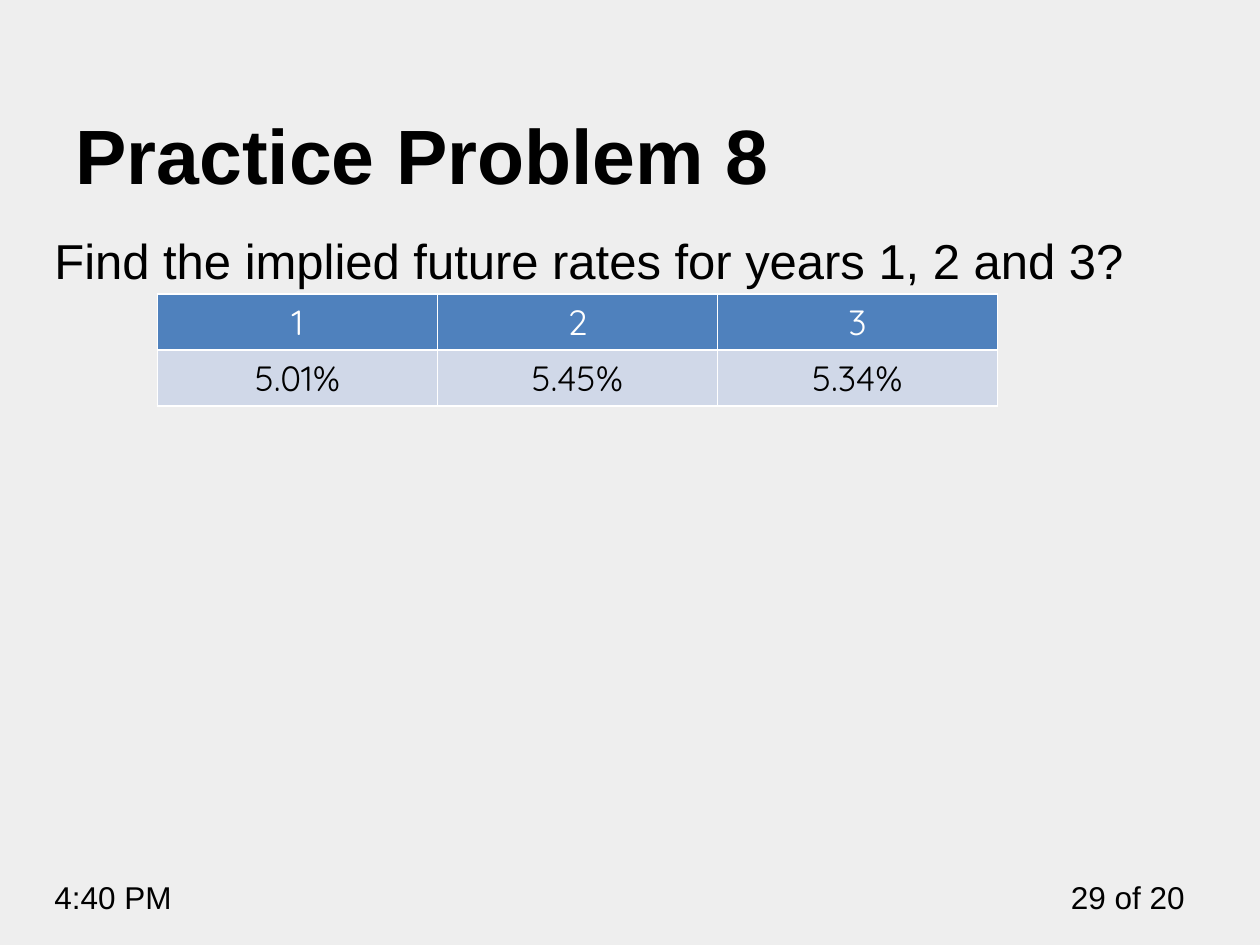
from lxml.etree import SubElement
from pptx import Presentation
from pptx.dml.color import RGBColor as Color
from pptx.enum.text import MSO_ANCHOR as Anchor, PP_ALIGN as Align
from pptx.oxml.ns import qn
from pptx.util import Pt

COLORS = {"back": "EEEEEE", "ink": "000000", "white": "FFFFFF",
          "header": "4F81BD", "body": "D0D8E8"}

# text, (left, top, width, height), top inset, anchor, alignment, font
TEXTS = [
    ("29 of 20", (600, 498, 84, 29), 3.6, Anchor.TOP, Align.RIGHT, {"size": Pt(18)}),
    ("4:40 PM", (24, 498, 114, 29), 3.6, Anchor.TOP, Align.LEFT, {"size": Pt(18)}),
    ("Find the implied future rates for years 1, 2 and 3?",
     (24, 126, 666, 366), 6, Anchor.TOP, Align.LEFT, {"size": Pt(28)}),
    ("Practice Problem 8", (36, 28, 648, 90), 3.6, Anchor.BOTTOM, Align.LEFT,
     {"size": Pt(44), "bold": True}),
]
RATES = [("1", "2", "3"), ("5.01%", "5.45%", "5.34%")]
ROW_STYLES = [("header", "white"), ("body", "ink")]
TABLE_LEFT, TABLE_TOP, COLUMN_WIDTH, ROW_HEIGHT = 90, 168, 160, 32


def rgb(name):
    return Color.from_string(COLORS[name])


def write(frame, text, align, color, font):
    para = frame.paragraphs[0]
    para.alignment = align
    span = para.add_run()
    span.text = text
    for name, value in font.items():
        setattr(span.font, name, value)
    span.font.color.rgb = rgb(color)


def add_text(page, text, place, inset, anchor, align, font):
    frame = page.shapes.add_textbox(*map(Pt, place)).text_frame
    frame.word_wrap = True
    frame.margin_top = Pt(inset)
    frame.vertical_anchor = anchor
    write(frame, text, align, "ink", {"name": "Arial", **font})


def add_borders(cell):
    """Draw white one-point lines; they must come before the cell's fill."""
    props = cell._tc.get_or_add_tcPr()
    for side in ("lnL", "lnR", "lnT", "lnB"):
        line = SubElement(props, qn(f"a:{side}"), w=str(Pt(1)))
        fill = SubElement(line, qn("a:solidFill"))
        SubElement(fill, qn("a:srgbClr"), val=COLORS["white"])


def add_rates(page):
    rows, columns = len(RATES), len(RATES[0])
    table = page.shapes.add_table(
        rows, columns, Pt(TABLE_LEFT), Pt(TABLE_TOP),
        Pt(columns * COLUMN_WIDTH), Pt(rows * ROW_HEIGHT)).table
    for row, values, (fill, ink) in zip(table.rows, RATES, ROW_STYLES):
        for cell, value in zip(row.cells, values):
            add_borders(cell)
            cell.fill.solid()
            cell.fill.fore_color.rgb = rgb(fill)
            write(cell.text_frame, value, Align.CENTER, ink,
                  {"name": "Quicksand", "size": Pt(20), "bold": False})


def main():
    deck = Presentation()
    deck.slide_width, deck.slide_height = Pt(720), Pt(540)
    page = deck.slides.add_slide(deck.slide_layouts[6])
    page.background.fill.solid()
    page.background.fill.fore_color.rgb = rgb("back")
    for entry in TEXTS:
        add_text(page, *entry)
    add_rates(page)
    deck.save("out.pptx")


if __name__ == "__main__":
    main()
